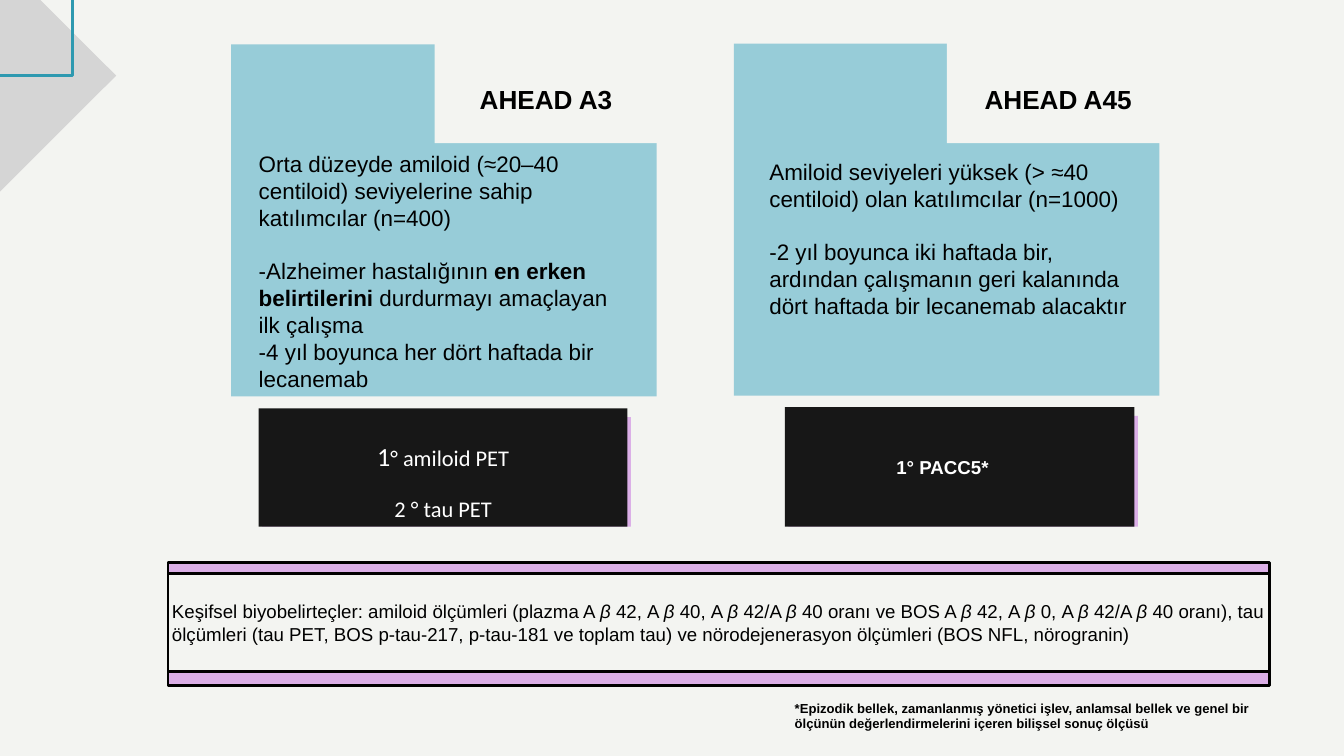
from dataclasses import dataclass
from typing import NamedTuple

from pptx import Presentation
from pptx.dml.color import RGBColor
from pptx.enum.shapes import MSO_SHAPE as Shape
from pptx.enum.text import MSO_ANCHOR as Anchor, PP_ALIGN as Align
from pptx.util import Cm, Pt

BLACK, WHITE, PAPER = "000000", "FFFFFF", "F3F4F1"
BLUE, LILAC, DARK, GREY, TEAL = "97CCD8", "DBAFE7", "171717", "D5D5D5", "2E99B0"
INSET = 0.15


class Box(NamedTuple):
    left: float
    top: float
    width: float
    height: float


class Run(NamedTuple):
    text: str
    bold: bool = False
    italic: bool = False
    size: float | None = None


class Para(NamedTuple):
    runs: list[Run]
    before: float = 0


@dataclass
class Arm:
    title: str
    card: Box
    notch_left: float
    body: Box
    paras: list[Para]
    outcome: Box


def rgb(color: str) -> RGBColor:
    return RGBColor.from_string(color)


def add_box(s, box: Box, fill: str | None = None, line: str | None = None, kind=Shape.RECTANGLE):
    sp = s.shapes.add_shape(kind, *map(Cm, box))
    sp.shadow.inherit = False
    if fill:
        sp.fill.solid()
        sp.fill.fore_color.rgb = rgb(fill)
    else:
        sp.fill.background()
    if line:
        sp.line.color.rgb = rgb(line)
        sp.line.width = Pt(3)
    else:
        sp.line.fill.background()
    return sp


def add_text_box(s, box: Box):
    return s.shapes.add_textbox(*map(Cm, box))


def write(sp, paras: list[Para], *, size: float, color: str = BLACK, font: str = "Arial",
          align=Align.LEFT, anchor=Anchor.TOP, spacing: float | None = None,
          inset: float | None = None) -> None:
    tf = sp.text_frame
    tf.word_wrap = True
    tf.vertical_anchor = anchor
    if inset is not None:
        tf.margin_left = tf.margin_right = tf.margin_top = tf.margin_bottom = Cm(inset)
    for i, para in enumerate(paras):
        p = tf.add_paragraph() if i else tf.paragraphs[0]
        p.alignment = align
        if spacing:
            p.line_spacing = spacing
        if para.before:
            p.space_before = Pt(para.before)
        for run in para.runs:
            r = p.add_run()
            r.text = run.text
            r.font.name = font
            r.font.size = Pt(run.size or size)
            r.font.bold = run.bold
            r.font.italic = run.italic
            r.font.color.rgb = rgb(color)


def italic_betas(text: str) -> list[Run]:
    first, *rest = text.split("β")
    runs = [Run(first)]
    for part in rest:
        runs += [Run("β", italic=True), Run(part)]
    return runs


def add_arm(s, arm: Arm):
    add_box(s, arm.card, BLUE)
    add_box(s, Box(arm.notch_left, 1.6, 8.41, 3.81), PAPER)
    write(add_text_box(s, Box(arm.notch_left, 1.07, 8.41, 4.34)), [Para([Run(arm.title, bold=True)])],
          size=28, align=Align.CENTER, anchor=Anchor.MIDDLE, spacing=1.87, inset=INSET)
    write(add_text_box(s, arm.body), arm.paras, size=24, inset=0)
    left, top, width, height = arm.outcome
    add_box(s, Box(left + 0.13, top + 0.33, width, height - 0.33), LILAC)
    return add_box(s, arm.outcome, DARK)


ARMS = [
    Arm("AHEAD A3", Box(8.74, 1.68, 16.08, 13.31), 16.43, Box(9.78, 5.69, 14.07, 9.25), [
        Para([Run("Orta düzeyde amiloid (≈20–40 centiloid) seviyelerine sahip katılımcılar (n=400)")]),
        Para([Run("-Alzheimer hastalığının "), Run("en erken belirtilerini ", bold=True),
              Run("durdurmayı amaçlayan ilk çalışma")], before=28),
        Para([Run("-4 yıl boyunca her dört haftada bir lecanemab")]),
    ], Box(9.78, 15.44, 13.94, 4.47)),
    Arm("AHEAD A45", Box(27.74, 1.65, 16.08, 13.31), 35.79, Box(29.08, 5.99, 13.79, 6.15), [
        Para([Run("Amiloid seviyeleri yüksek (> ≈40 centiloid) olan katılımcılar (n=1000)")]),
        Para([Run("-2 yıl boyunca iki haftada bir, ardından çalışmanın geri kalanında "
                  "dört haftada bir lecanemab alacaktır")], before=28),
    ], Box(29.67, 15.39, 13.21, 4.52)),
]

BIOMARKERS = (
    "Keşifsel biyobelirteçler: amiloid ölçümleri (plazma A β 42, A β 40, A β 42/A β 40 oranı "
    "ve BOS A β 42, A β 0, A β 42/A β 40 oranı), tau ölçümleri (tau PET, BOS p-tau-217, "
    "p-tau-181 ve toplam tau) ve nörodejenerasyon ölçümleri (BOS NFL, nörogranin)"
)
FOOTNOTE = (
    "*Epizodik bellek, zamanlanmış yönetici işlev, anlamsal bellek ve genel bir ölçünün "
    "değerlendirmelerini içeren bilişsel sonuç ölçüsü"
)


def main() -> None:
    prs = Presentation()
    prs.slide_width, prs.slide_height = Cm(50.8), Cm(28.58)
    s = prs.slides.add_slide(prs.slide_layouts[6])
    s.background.fill.solid()
    s.background.fill.fore_color.rgb = rgb(PAPER)

    pet_box, _ = [add_arm(s, arm) for arm in ARMS]
    write(pet_box, [Para([Run("1", size=28), Run("° amiloid PET")]), Para([Run("2 ° tau PET")])],
          size=24, color=WHITE, font="Calibri", align=Align.CENTER, anchor=Anchor.MIDDLE,
          spacing=1.87, inset=INSET)
    write(add_text_box(s, Box(33.63, 17.12, 13.77, 1.12)), [Para([Run("1° PACC5*", bold=True)])],
          size=20, color=WHITE)

    add_box(s, Box(6.35, 21.26, 41.63, 4.67), LILAC, BLACK)
    panel = add_box(s, Box(6.35, 21.67, 41.63, 3.73), PAPER, BLACK)
    write(panel, [Para(italic_betas(BIOMARKERS))], size=20, anchor=Anchor.MIDDLE, inset=INSET)

    add_box(s, Box(-7.19, -2.92, 11.58, 11.56), GREY, kind=Shape.DIAMOND)
    add_box(s, Box(-4.47, -4.34, 7.21, 7.21), line=TEAL)
    write(add_text_box(s, Box(29.79, 26.34, 19.18, 1.45)), [Para([Run(FOOTNOTE, bold=True)])], size=14)

    prs.save("out.pptx")


if __name__ == "__main__":
    main()
